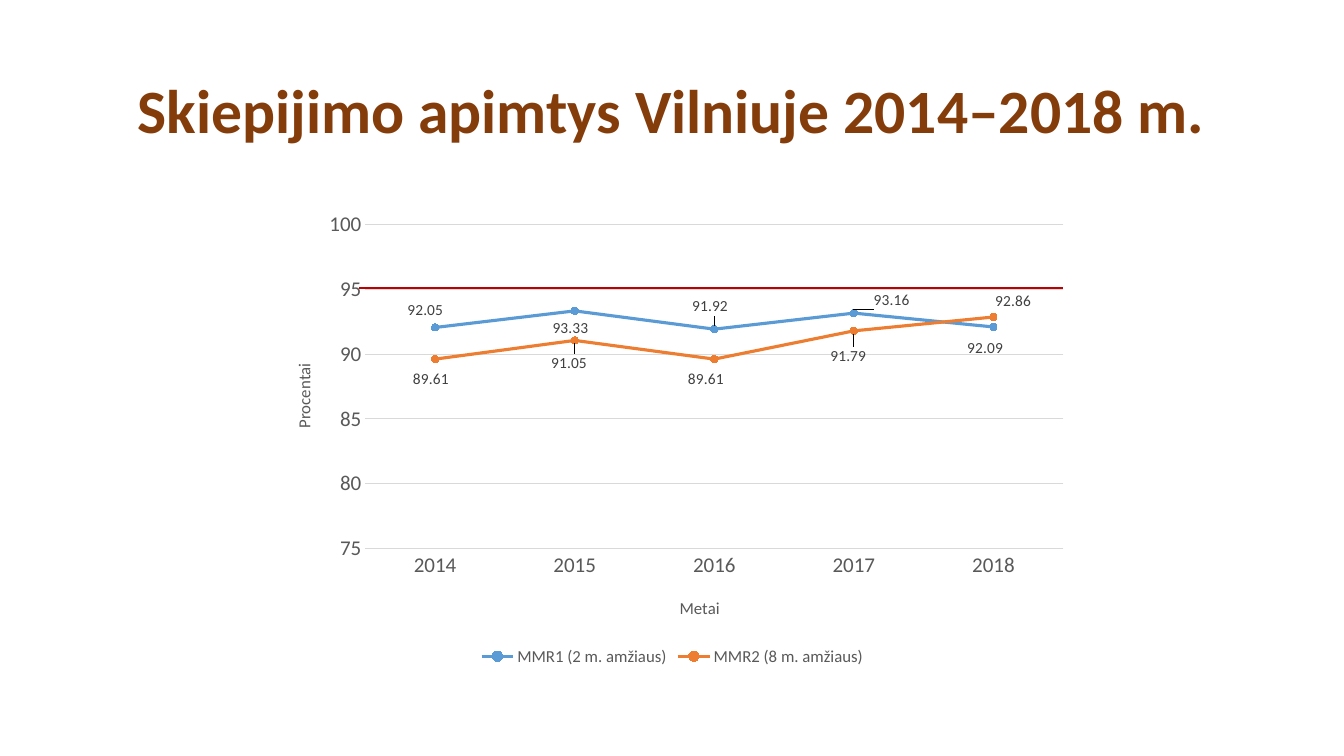
from lxml import etree
from pptx import Presentation
from pptx.chart.data import CategoryChartData
from pptx.dml.color import RGBColor
from pptx.enum.chart import (XL_CHART_TYPE, XL_LABEL_POSITION, XL_LEGEND_POSITION,
                             XL_MARKER_STYLE, XL_TICK_MARK)
from pptx.enum.shapes import MSO_CONNECTOR
from pptx.enum.text import MSO_ANCHOR, PP_ALIGN
from pptx.oxml import parse_xml
from pptx.oxml.ns import nsdecls, qn
from pptx.util import Pt

ABOVE, BELOW = XL_LABEL_POSITION.ABOVE, XL_LABEL_POSITION.BELOW
NO_TICK = XL_TICK_MARK.NONE
CIRCLE = XL_MARKER_STYLE.CIRCLE
FONT = "Calibri"
GREY, GRID = "595959", "D9D9D9"
CHART_LEFT, CHART_TOP, CHART_WIDTH, CHART_HEIGHT = 189.4, 145.4, 581.8, 333.4


def style(font, size, color, bold=False):
    font.name, font.size, font.bold = FONT, Pt(size), bold
    font.color.rgb = RGBColor.from_string(color)


def manual_layout(**values):
    """Return a c:layout element; values are fractions of the chart."""
    parts = "".join(f'<c:{name} val="{value}"/>' for name, value in values.items())
    return parse_xml(f'<c:layout {nsdecls("c")}><c:manualLayout>{parts}'
                     "</c:manualLayout></c:layout>")


deck = Presentation()
deck.slide_width, deck.slide_height = Pt(960), Pt(540)
page = deck.slides.add_slide(deck.slide_layouts[6])

# Title
box = page.shapes.add_textbox(Pt(66), Pt(28.8), Pt(828), Pt(104.4))
box.text_frame.word_wrap = True
box.text_frame.vertical_anchor = MSO_ANCHOR.MIDDLE
para = box.text_frame.paragraphs[0]
para.alignment, para.line_spacing = PP_ALIGN.CENTER, 0.9
span = para.add_run()
span.text = "Skiepijimo apimtys Vilniuje 2014–2018 m."
style(span.font, 44, "843C0B", bold=True)

# Vaccination chart: each label has a side and an offset in points
vaccines = [
    ("MMR1 (2 m. amžiaus)", "5B9BD5", [92.05, 93.33, 91.92, 93.16, 92.09],
     [(ABOVE, -7, 0), (BELOW, -3, 0), (ABOVE, -3, -4), (ABOVE, 27, 3), (BELOW, -6, 3)]),
    ("MMR2 (8 m. amžiaus)", "ED7D31", [89.61, 91.05, 89.61, 91.79, 92.86],
     [(BELOW, -3, 2), (BELOW, -4, 4), (BELOW, -6, 2), (BELOW, -4, 6), (ABOVE, 14, 1)]),
]
data = CategoryChartData(number_format="0.00")
data.categories = ["2014", "2015", "2016", "2017", "2018"]
for name, color, values, labels in vaccines:
    data.add_series(name, values)
chart = page.shapes.add_chart(
    XL_CHART_TYPE.LINE_MARKERS, Pt(CHART_LEFT), Pt(CHART_TOP),
    Pt(CHART_WIDTH), Pt(CHART_HEIGHT), data).chart
style(chart.font, 10, "000000")
chart.has_title = False
chart.has_legend = True
chart.legend.position = XL_LEGEND_POSITION.BOTTOM
chart.legend.include_in_layout = False
style(chart.legend.font, 12, GREY)

plot_area = chart._chartSpace.find(".//" + qn("c:plotArea"))
for old_layout in plot_area.findall(qn("c:layout")):
    plot_area.remove(old_layout)
plot_area.insert(0, manual_layout(layoutTarget="inner", xMode="edge", yMode="edge",
                                  x=0.123, y=0.045, w=0.857, h=0.694))

# Axes
years, percents = chart.category_axis, chart.value_axis
for axis, caption, x, y in ((years, "Metai", 0.505, 0.835),
                            (percents, "Procentai", 0.03, 0.336)):
    axis.major_tick_mark = axis.minor_tick_mark = NO_TICK
    style(axis.tick_labels.font, 15, GREY)
    span = axis.axis_title.text_frame.paragraphs[0].add_run()
    span.text = caption
    style(span.font, 12, GREY)
    title = axis.axis_title._element
    for old_layout in title.findall(qn("c:layout")):
        title.remove(old_layout)
    title.find(qn("c:tx")).addnext(manual_layout(xMode="edge", yMode="edge", x=x, y=y))
percents.minimum_scale, percents.maximum_scale, percents.major_unit = 75, 100, 5
percents.tick_labels.number_format = "0"
percents.tick_labels.number_format_is_linked = False
percents.format.line.fill.background()
for line in (years.format.line, percents.major_gridlines.format.line):
    line.color.rgb = RGBColor.from_string(GRID)
    line.width = Pt(0.75)

# Series
plot = chart.plots[0]
plot.vary_by_categories = False
for series, (name, color, values, labels) in zip(plot.series, vaccines):
    series.smooth = False
    series.format.line.color.rgb = RGBColor.from_string(color)
    series.format.line.width = Pt(2.25)
    series.marker.style, series.marker.size = CIRCLE, 5
    series.marker.format.fill.solid()
    series.marker.format.fill.fore_color.rgb = RGBColor.from_string(color)
    series.marker.format.line.color.rgb = RGBColor.from_string(color)
    series.data_labels.show_value = True
    style(series.data_labels.font, 11, "404040")
    for index, (side, dx, dy) in enumerate(labels):
        label = series.points[index].data_label
        style(label.font, 11, "404040")
        label.position = side
        entry = series._element.findall(".//" + qn("c:dLbl"))[index]
        entry.insert(1, manual_layout(x=round(dx / CHART_WIDTH, 4),
                                      y=round(dy / CHART_HEIGHT, 4)))

# 95 % target
target = page.shapes.add_connector(MSO_CONNECTOR.STRAIGHT, Pt(256.5), Pt(205.9),
                                   Pt(759.6), Pt(205.9))
target.line.color.rgb = RGBColor.from_string("C00000")
target.line.width = Pt(1.5)
etree.SubElement(target._element.spPr, qn("a:effectLst"))

deck.save("out.pptx")
